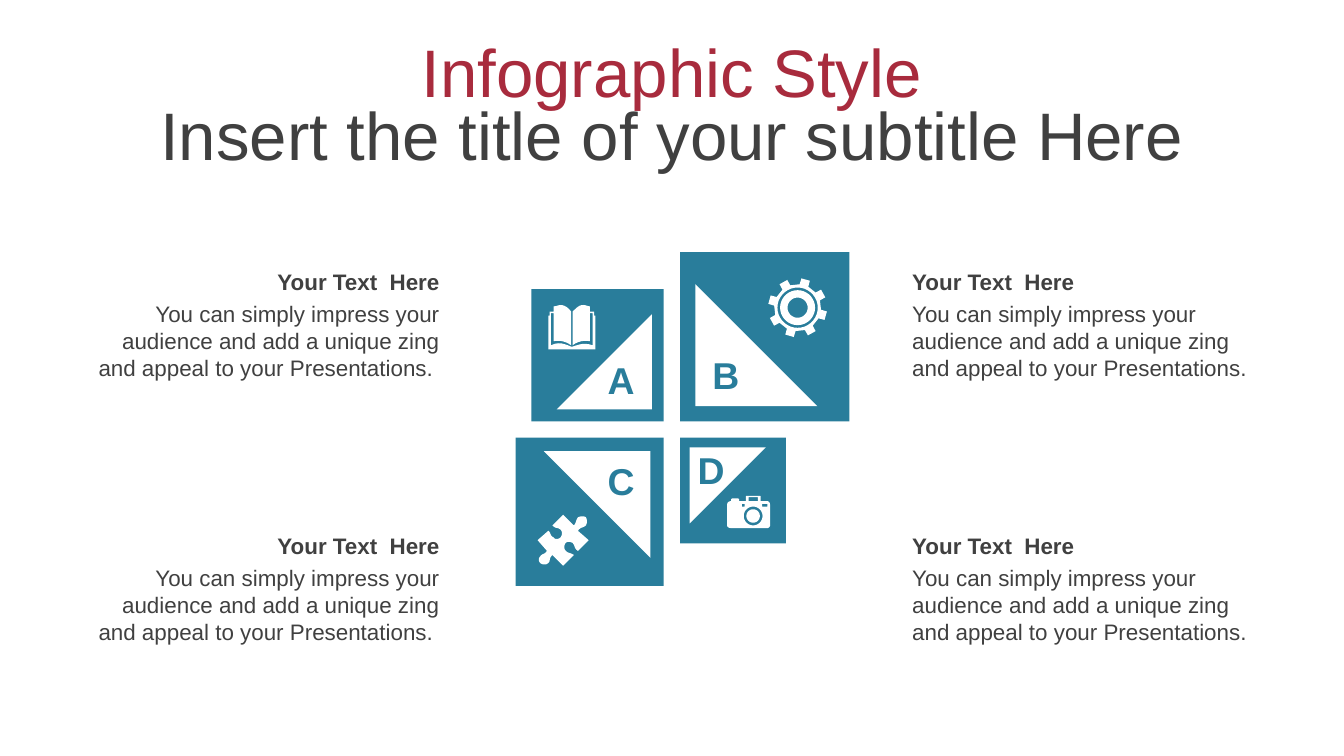
"""Build an infographic slide with four lettered squares around a centre and four captions."""
import math

import pptx
import pptx.dml.color
import pptx.enum.shapes
import pptx.enum.text
import pptx.util

Cm = pptx.util.Cm
SHAPE = pptx.enum.shapes.MSO_SHAPE
ALIGN = pptx.enum.text.PP_ALIGN
ANCHOR = pptx.enum.text.MSO_ANCHOR

COLORS = {"red": "A82B3D", "dark": "404040", "teal": "297D9B", "white": "FFFFFF"}
FORMATS = {
    "title": {"name": "Arial", "size": pptx.util.Pt(36)},
    "letter": {"name": "Arial", "size": pptx.util.Pt(20), "bold": True},
    "heading": {"name": "Arial", "size": pptx.util.Pt(12), "bold": True},
    "body": {"name": "Arial", "size": pptx.util.Pt(12)},
}

TITLES = [
    ("Infographic Style", "red", 0.53, 1.6),
    ("Insert the title of your subtitle Here", "dark", 2.13, 0.79),
]
HEADING = "Your Text  Here"
BODY = "You can simply impress your audience and add a unique zing and appeal to your Presentations."
CAPTION_COLUMNS = [(1.5, ALIGN.RIGHT, BODY + " "), (16.99, ALIGN.LEFT, BODY)]
CAPTION_ROWS = [4.95, 9.94]

CENTER_X, CENTER_Y, GAP = 12.7, 8.12, 0.31
SQUARES = [
    ("A", -1, -1, 2.5, 270, 11.18, 6.63),
    ("B", 1, -1, 3.2, 0, 13.16, 6.53),
    ("C", -1, 1, 2.8, 180, 11.18, 8.53),
    ("D", 1, 1, 2.0, 90, 12.88, 8.33),
]
INSET, TRIANGLE = 0.09, 0.72

ICON_UNIT = Cm(0.0254)
BOOK = [
    (425, 258), (426, 258), (432, 256, 435, 255, 441, 257), (441, 233), (439, 233), (439, 254),
    (435, 253, 430, 254, 426, 257), (426, 232), (429, 229, 431, 227, 434, 227),
    (436, 227, 437, 228, 439, 228), (439, 232), (442, 232), (442, 235), (443, 235), (443, 260),
    (408, 260), (408, 235), (409, 235), (409, 232), (412, 232), (412, 228),
    (414, 228, 416, 227, 417, 227), (420, 227, 423, 229, 425, 232), (425, 257),
    (421, 254, 416, 253, 412, 254), (412, 233), (410, 233), (410, 257),
    (416, 254, 420, 256, 425, 258),
]
PUZZLE = [
    (436, 385), (437, 387, 437, 389, 436, 391), (434, 393, 432, 392, 430, 395), (438, 402),
    (430, 410), (427, 408, 428, 406, 426, 404), (424, 403, 422, 403, 421, 404),
    (420, 405, 419, 408, 421, 410), (423, 412, 424, 411, 427, 413), (419, 421), (411, 413),
    (408, 416, 410, 417, 408, 419), (406, 421, 403, 420, 402, 419),
    (401, 418, 400, 416, 402, 414), (403, 412, 405, 413, 407, 410), (400, 402), (408, 395),
    (410, 396, 409, 399, 412, 400), (413, 402, 416, 401, 417, 400),
    (418, 399, 419, 396, 417, 394), (414, 392, 414, 394, 411, 391), (419, 383), (427, 391),
    (429, 389, 428, 388, 430, 385), (432, 384, 435, 384, 436, 385),
]
CAMERA_BODY = [
    (556, 369), (565, 369), (566, 369, 566, 369, 566, 370), (566, 373), (571, 373),
    (572, 373, 573, 374, 573, 376), (573, 391), (573, 392, 572, 393, 571, 393), (544, 393),
    (542, 393, 541, 392, 541, 391), (541, 376), (541, 374, 542, 373, 544, 373), (544, 372),
    (544, 372, 544, 371, 545, 371), (549, 371), (550, 371, 550, 372, 550, 372), (550, 373),
    (555, 373), (555, 370), (555, 369, 555, 369, 556, 369),
]
CAMERA_WINDOWS = [(552, 375, 554, 377), (567, 375, 571, 377), (557, 370, 564, 373)]
LENS = (560.4, 384)
GEAR = (593.5, 229)


def polar(center, radius, degrees):
    a = math.radians(degrees)
    return center[0] + radius * math.cos(a), center[1] + radius * math.sin(a)


def circle(center, radius):
    return [polar(center, radius, d) for d in range(0, 360, 10)]


def gear_rim(center, root, tip, teeth=8, start=16):
    corners = [(-11, root), (-8.5, tip), (8.5, tip), (11, root)]
    return [polar(center, r, start + 360 / teeth * i + d) for i in range(teeth) for d, r in corners]


def flatten(path, steps=6):
    pts = []
    for seg in path:
        if len(seg) == 2:
            pts.append(seg)
            continue
        ctrl = [pts[-1], seg[:2], seg[2:4], seg[4:]]
        for t in (i / steps for i in range(1, steps + 1)):
            w = [math.comb(3, k) * (1 - t) ** (3 - k) * t ** k for k in range(4)]
            pts.append(tuple(sum(a * c[axis] for a, c in zip(w, ctrl)) for axis in (0, 1)))
    return pts


def paint(sp, color):
    sp.shadow.inherit = False
    sp.fill.solid()
    sp.fill.fore_color.rgb = pptx.dml.color.RGBColor.from_string(COLORS[color])
    sp.line.fill.background()


def add_box(s, kind, x, y, side, color, rotation=0):
    sp = s.shapes.add_shape(kind, Cm(x), Cm(y), Cm(side), Cm(side))
    sp.rotation = rotation
    paint(sp, color)


def add_icon(s, contours):
    scaled = [[(x * ICON_UNIT, y * ICON_UNIT) for x, y in flatten(c)] for c in contours]
    fb = s.shapes.build_freeform(*scaled[0][0])
    for i, pts in enumerate(scaled):
        if i:
            fb.move_to(*pts[0])
        fb.add_line_segments(pts[1:], close=True)
    paint(fb.convert_to_shape(), "white")


def add_text(s, text, x, y, w, h, style, color, align, anchor=ANCHOR.TOP):
    tf = s.shapes.add_textbox(Cm(x), Cm(y), Cm(w), Cm(h)).text_frame
    tf.word_wrap = True
    tf.vertical_anchor = anchor
    p = tf.paragraphs[0]
    p.alignment = align
    r = p.add_run()
    r.text = text
    for key, value in FORMATS[style].items():
        setattr(r.font, key, value)
    r.font.color.rgb = pptx.dml.color.RGBColor.from_string(COLORS[color])


def main():
    prs = pptx.Presentation()
    prs.slide_width, prs.slide_height = Cm(25.4), Cm(14.29)
    s = prs.slides.add_slide(prs.slide_layouts[6])

    for text, color, y, h in TITLES:
        add_text(s, text, 0, y, 25.4, h, "title", color, ALIGN.CENTER, ANCHOR.MIDDLE)

    for letter, dx, dy, side, rotation, tx, ty in SQUARES:
        for kind, size, offset, color, turn in (
            (SHAPE.RECTANGLE, side, GAP / 2, "teal", 0),
            (SHAPE.RIGHT_TRIANGLE, side * TRIANGLE, GAP / 2 + side * INSET, "white", rotation),
        ):
            x = CENTER_X + dx * offset - (size if dx < 0 else 0)
            y = CENTER_Y + dy * offset - (size if dy < 0 else 0)
            add_box(s, kind, x, y, size, color, turn)
        add_text(s, letter, tx, ty, 1.12, 1.12, "letter", "teal", ALIGN.CENTER)

    windows = [[(l, t), (r, t), (r, b), (l, b)] for l, t, r, b in CAMERA_WINDOWS]
    add_icon(s, [BOOK])
    add_icon(s, [PUZZLE])
    add_icon(s, [gear_rim(GEAR, 17.5, 22)] + [circle(GEAR, r) for r in (15, 13, 7.5)])
    add_icon(s, [CAMERA_BODY] + windows + [circle(LENS, r) for r in (7, 5)])

    for x, align, body in CAPTION_COLUMNS:
        for y in CAPTION_ROWS:
            add_text(s, body, x, y + 0.6, 7.06, 1.8, "body", "dark", align)
            add_text(s, HEADING, x, y, 7.06, 0.76, "heading", "dark", align)

    prs.save("out.pptx")


if __name__ == "__main__":
    main()
